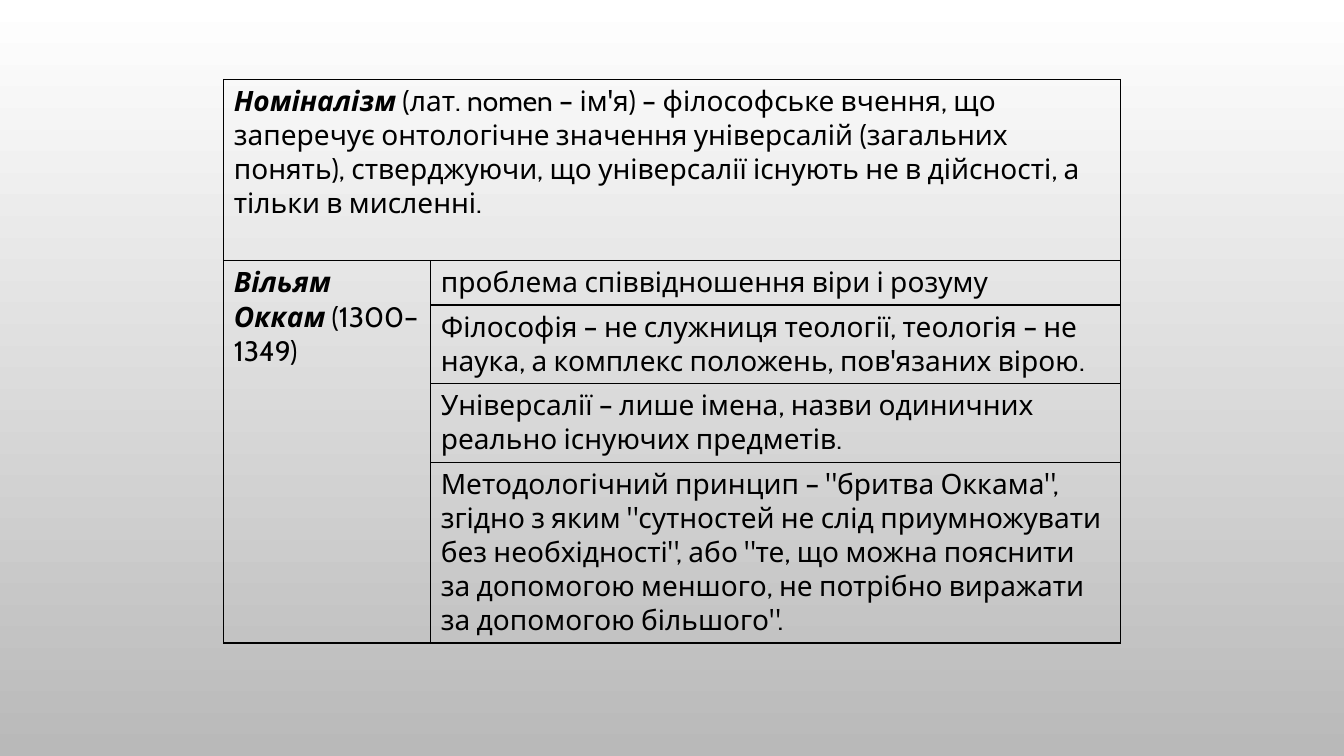
"""Build a slide with a table on nominalism and William of Ockham."""
from dataclasses import dataclass

from lxml.etree import SubElement
from pptx import Presentation
from pptx.dml.color import RGBColor
from pptx.oxml.ns import qn
from pptx.table import Table, _Cell as Cell
from pptx.util import Inches, Pt

BLACK = RGBColor(0x00, 0x00, 0x00)
WHITE = RGBColor(0xFF, 0xFF, 0xFF)
GREY = RGBColor(0xB9, 0xB9, 0xB9)

FONT = "Cabin"
WIDTH, HEIGHT = Inches(13.33), Inches(7.5)
LEFT, TOP = 16.65, 10.5
COLUMNS = (15.4, 51.3)
ROWS = (24, 5.8, 10.4, 10.4, 23.9)


@dataclass(frozen=True)
class Entry:
    """A table cell: its place, its text, its leading term and its span."""
    row: int
    col: int
    text: str
    term: str = ""
    rows: int = 1
    cols: int = 1


ENTRIES = (
    Entry(0, 0, " (лат. nomen – ім'я) – філософське вчення, що заперечує онтологічне "
          "значення універсалій (загальних понять), стверджуючи, що універсалії "
          "існують не в дійсності, а тільки в мисленні.", "Номіналізм", cols=2),
    Entry(1, 0, " (1300–1349)", "Вільям Оккам", rows=4),
    Entry(1, 1, "проблема співвідношення віри і розуму"),
    Entry(2, 1, "Філософія – не служниця теології, теологія – не наука, "
          "а комплекс положень, пов'язаних вірою."),
    Entry(3, 1, "Універсалії – лише імена, назви одиничних реально існуючих предметів."),
    Entry(4, 1, "Методологічний принцип – \"бритва Оккама\", згідно з яким \"сутностей "
          "не слід приумножувати без необхідності\", або \"те, що можна пояснити за "
          "допомогою меншого, не потрібно виражати за допомогою більшого\"."),
)


def across(percent: float) -> int:
    """Turn a percentage of the slide width into a length."""
    return round(WIDTH * percent / 100)


def down(percent: float) -> int:
    """Turn a percentage of the slide height into a length."""
    return round(HEIGHT * percent / 100)


def format_cell(cell: Cell) -> None:
    """Give a cell thin black borders and no fill."""
    props = cell._tc.get_or_add_tcPr()
    for side in ("a:lnL", "a:lnR", "a:lnT", "a:lnB"):
        line = SubElement(props, qn(side), w=str(Pt(1)))
        fill = SubElement(line, qn("a:solidFill"))
        SubElement(fill, qn("a:srgbClr"), val=str(BLACK))
    cell.fill.background()


def write_entry(table: Table, entry: Entry) -> None:
    """Merge the cells of an entry and write its text."""
    cell = table.cell(entry.row, entry.col)
    if entry.rows * entry.cols > 1:
        cell.merge(table.cell(entry.row + entry.rows - 1, entry.col + entry.cols - 1))
    p = cell.text_frame.paragraphs[0]
    for text, strong in ((entry.term, True), (entry.text, False)):
        if text:
            r = p.add_run()
            r.text = text
            r.font.name, r.font.size = FONT, Pt(20)
            r.font.bold = r.font.italic = strong
            r.font.color.rgb = BLACK


def main() -> None:
    """Build and save the presentation."""
    prs = Presentation()
    prs.slide_width, prs.slide_height = WIDTH, HEIGHT
    s = prs.slides.add_slide(prs.slide_layouts[6])
    fill = s.background.fill
    fill.gradient()
    fill.gradient_angle = 270
    for stop, color, position in zip(fill.gradient_stops, (WHITE, GREY), (0, 1)):
        stop.color.rgb, stop.position = color, position

    table = s.shapes.add_table(
        len(ROWS), len(COLUMNS), across(LEFT), down(TOP),
        across(sum(COLUMNS)), down(sum(ROWS))).table
    table.first_row = table.horz_banding = False
    for column, share in zip(table.columns, COLUMNS):
        column.width = across(share)
    for row, share in zip(table.rows, ROWS):
        row.height = down(share)
    for cell in table.iter_cells():
        format_cell(cell)
    for entry in ENTRIES:
        write_entry(table, entry)
    prs.save("out.pptx")


if __name__ == "__main__":
    main()
